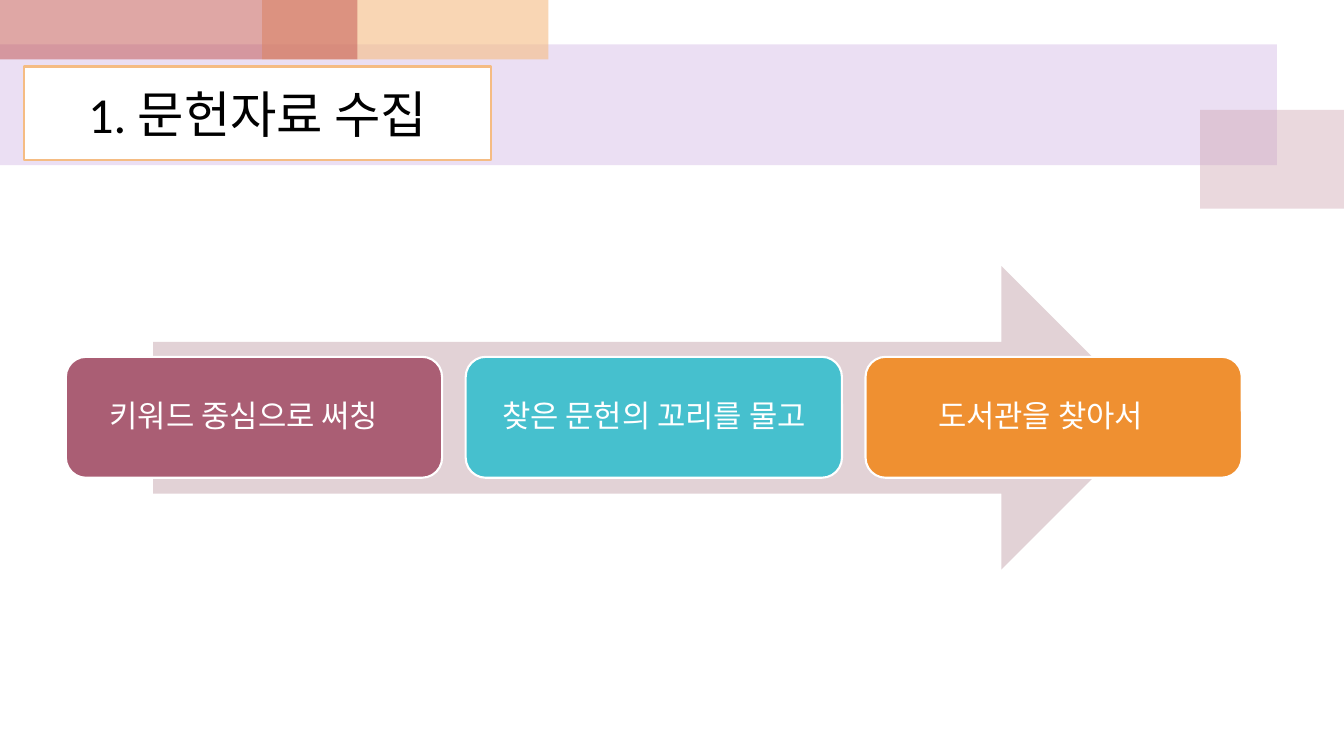
import dataclasses

import pptx
import pptx.dml.color
import pptx.enum.shapes
import pptx.enum.text
import pptx.oxml.ns
import pptx.util
from lxml import etree

KIND = pptx.enum.shapes.MSO_SHAPE
WIDE, HIGH = pptx.util.Inches(13.33), pptx.util.Inches(7.5)


@dataclasses.dataclass(frozen=True)
class Theme:
    font: str = "Calibri"
    head: int = 36
    body: int = 22
    edge: float = 1.5
    white: str = "FFFFFF"
    black: str = "000000"
    lilac: str = "BF98D8"
    pink: str = "CC9EAC"
    peach: str = "F5BC83"
    red: str = "C0504D"
    blush: str = "E2D2D6"
    plum: str = "AA5E74"
    teal: str = "46C0CE"
    amber: str = "EF9031"


THEME = Theme()

# Boxes are left, top, width, height in percent of the slide
BANDS = [
    ((0, 5.87, 95, 16), THEME.lilac, 30),
    ((89.3, 14.53, 10.7, 13.07), THEME.pink, 40),
    ((19.5, 0, 21.3, 7.87), THEME.peach, 60),
    ((0, 0, 26.6, 7.87), THEME.red, 50),
]
ARROW = (11.4, 35.2, 74.4, 40.13)
TITLE = (1.8, 8.8, 34.75, 12.4)
STAGE = (4.9, 47.2, 28, 16)
STEP = 29.75

# Wording, colour and extra right inset in inches
STAGES = [
    ("키워드 중심으로 써칭", THEME.plum, 0.2),
    ("찾은 문헌의 꼬리를 물고", THEME.teal, 0),
    ("도서관을 찾아서", THEME.amber, 0.26),
]


def assign(item, values):
    for name, value in values.items():
        setattr(item, name, value)


def color(code):
    return pptx.dml.color.RGBColor.from_string(code)


def scale(box):
    sides = ("left", "top", "width", "height")
    return {side: int(part * full / 100)
            for side, part, full in zip(sides, box, (WIDE, HIGH) * 2)}


def paint(shape, fill, edge=None, alpha=100):
    shape.fill.solid()
    shape.fill.fore_color.rgb = color(fill)
    if alpha < 100:
        tone = shape.fill._xPr.find(".//" + pptx.oxml.ns.qn("a:srgbClr"))
        etree.SubElement(tone, pptx.oxml.ns.qn("a:alpha"), val=str(alpha * 1000))
    if edge:
        shape.line.color.rgb = color(edge)
        shape.line.width = pptx.util.Pt(THEME.edge)
    else:
        shape.line.fill.background()


def block(slide, kind, box, fill, edge=None, alpha=100):
    shape = slide.shapes.add_shape(kind, **scale(box))
    shape.shadow.inherit = False
    paint(shape, fill, edge, alpha)
    return shape


def write(shape, text, size, tone, frame, space=1.0):
    body = shape.text_frame
    body.text = text
    assign(body, {
        "word_wrap": True,
        "auto_size": pptx.enum.text.MSO_AUTO_SIZE.NONE,
        "vertical_anchor": pptx.enum.text.MSO_ANCHOR.MIDDLE,
        **frame,
    })
    line = body.paragraphs[0]
    assign(line, {"alignment": pptx.enum.text.PP_ALIGN.CENTER,
                  "line_spacing": space})
    font = line.runs[0].font
    assign(font, {"name": THEME.font, "size": pptx.util.Pt(size)})
    font.color.rgb = color(tone)


def stage(slide, index, text, fill, inset):
    left, *rest = STAGE
    card = block(slide, KIND.ROUNDED_RECTANGLE,
                 (left + index * STEP, *rest), fill, THEME.white)
    pad = 0.15
    frame = {"margin_left": pptx.util.Inches(pad),
             "margin_right": pptx.util.Inches(pad + inset)}
    write(card, text, THEME.body, THEME.white, frame, 0.9)


def heading(slide, text):
    title = slide.shapes.title
    assign(title, scale(TITLE))
    paint(title, THEME.white, THEME.peach)
    write(title, text, THEME.head, THEME.black, {})
    # Bring the title in front of the bands
    slide.shapes._spTree.append(title._element)


def main():
    deck = pptx.Presentation()
    assign(deck, {"slide_width": WIDE, "slide_height": HIGH})
    slide = deck.slides.add_slide(deck.slide_layouts.get_by_name("Title Only"))

    # Header bands
    for box, fill, alpha in BANDS:
        block(slide, KIND.RECTANGLE, box, fill, alpha=alpha)

    # Process arrow with its stages
    block(slide, KIND.RIGHT_ARROW, ARROW, THEME.blush)
    for index, (text, fill, inset) in enumerate(STAGES):
        stage(slide, index, text, fill, inset)

    heading(slide, "1. 문헌자료 수집")
    deck.save("out.pptx")


if __name__ == "__main__":
    main()
